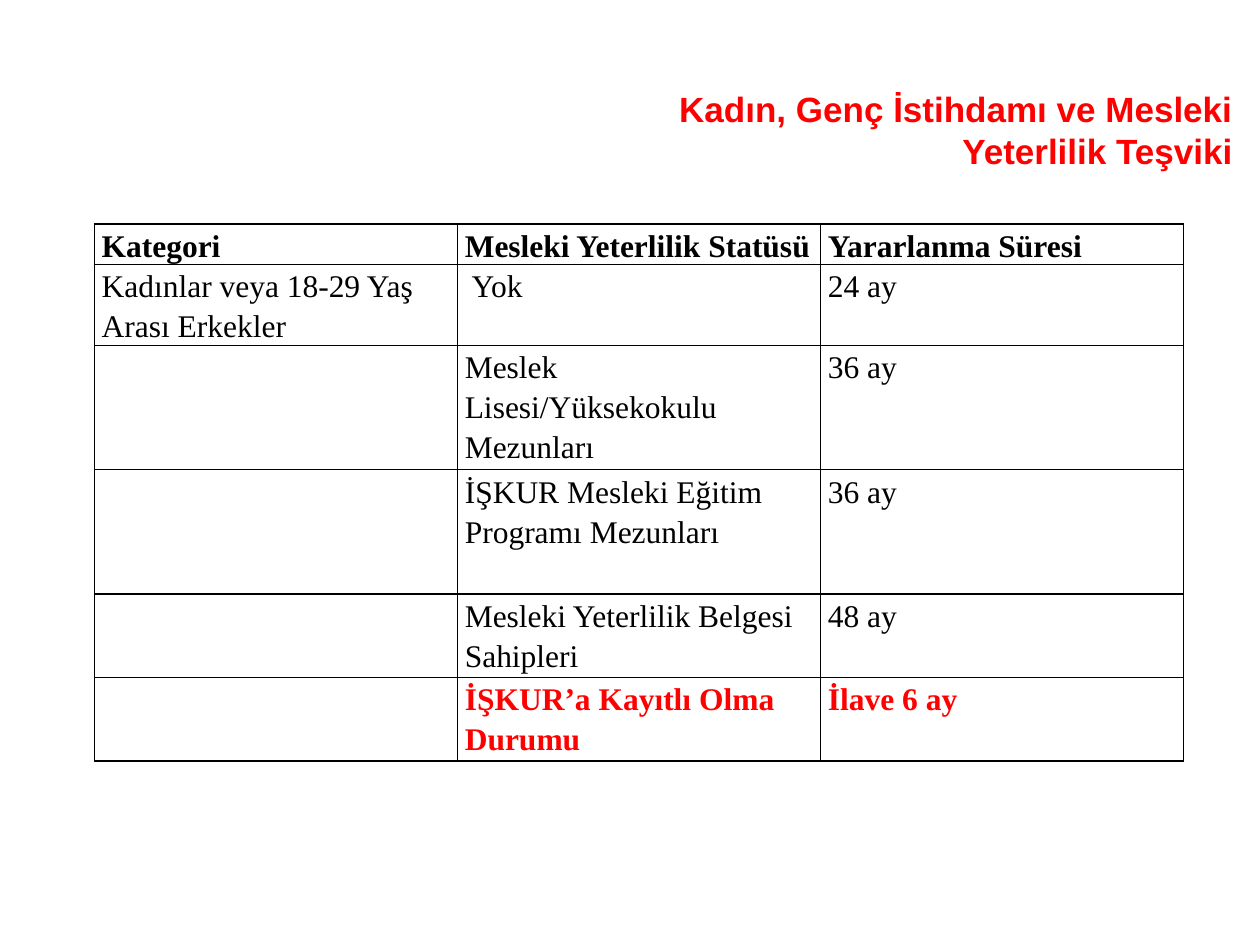
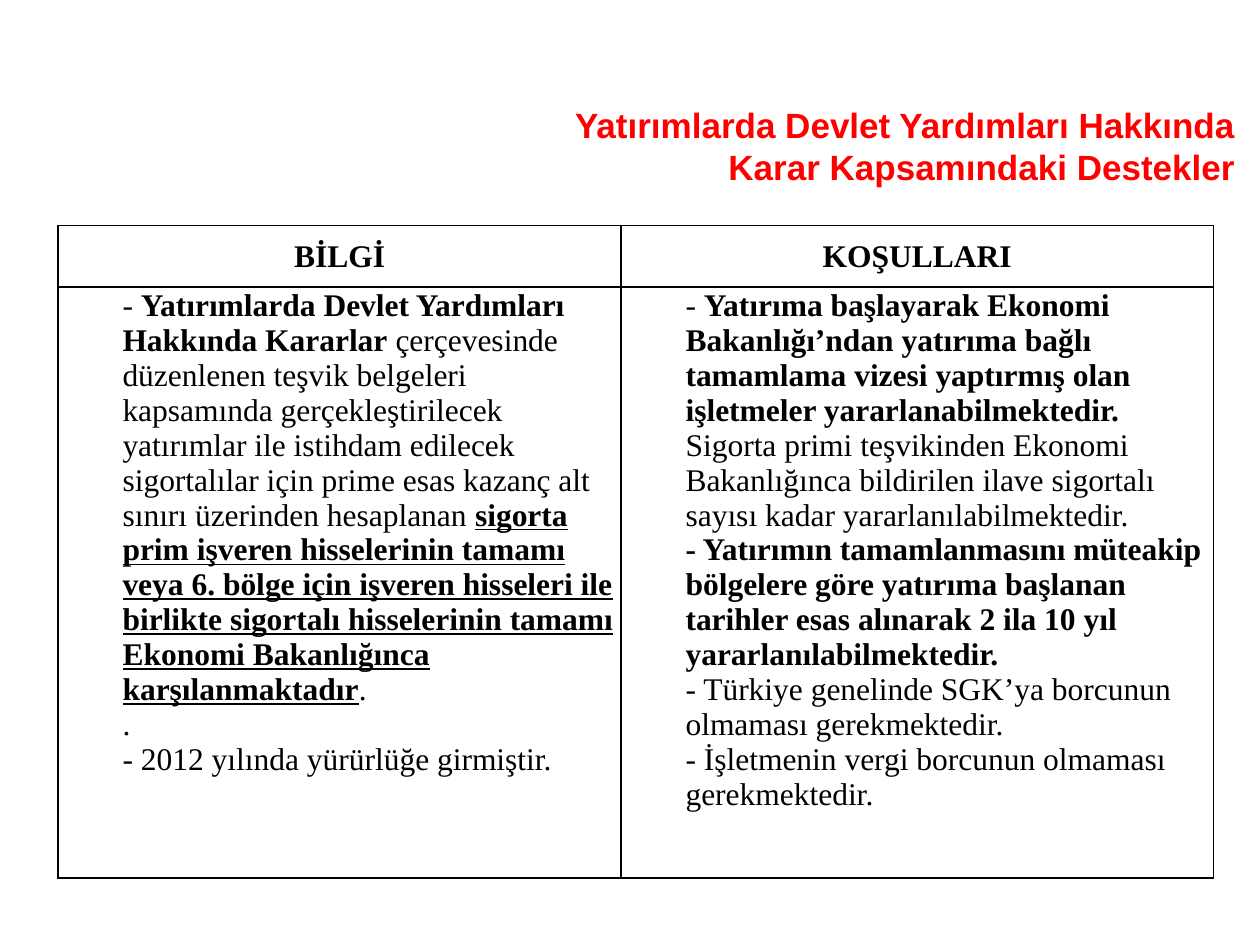
from dataclasses import dataclass

from lxml import etree
from pptx import Presentation
from pptx.dml.color import RGBColor
from pptx.enum.text import MSO_ANCHOR, PP_ALIGN
from pptx.oxml.ns import qn
from pptx.util import Cm, Pt

RIGHT, CENTER, LEFT = PP_ALIGN.RIGHT, PP_ALIGN.CENTER, PP_ALIGN.LEFT
TOP, MIDDLE = MSO_ANCHOR.TOP, MSO_ANCHOR.MIDDLE


@dataclass(frozen=True)
class Theme:
    ink: str = "000000"
    red: str = "FF0000"
    head_font: str = "Arial"
    body_font: str = "Times New Roman"
    head_size: int = 20
    body_size: int = 18
    rule: int = 1


THEME = Theme()

# Run styles: b = bold, u = underlined, r = red
TERMS = [
    ("Kategori", "Mesleki Yeterlilik Statüsü", "Yararlanma Süresi"),
    ("Kadınlar veya 18-29 Yaş Arası Erkekler", " Yok", "24 ay"),
    ("", "Meslek Lisesi/Yüksekokulu Mezunları", "36 ay"),
    ("", "İŞKUR Mesleki Eğitim Programı Mezunları", "36 ay"),
    ("", "Mesleki Yeterlilik Belgesi Sahipleri", "48 ay"),
    ("", "İŞKUR’a Kayıtlı Olma Durumu", "İlave 6 ay"),
]
TERM_STYLES = ["b", "", "", "", "", "br"]

INFO = [
    [
        ("- ", ""),
        ("Yatırımlarda Devlet Yardımları Hakkında Kararlar", "b"),
        (" çerçevesinde düzenlenen teşvik belgeleri kapsamında gerçekleştirilecek "
         "yatırımlar ile istihdam edilecek sigortalılar için prime esas kazanç alt "
         "sınırı üzerinden hesaplanan ", ""),
        ("sigorta prim işveren hisselerinin tamamı veya 6. bölge için işveren "
         "hisseleri ile birlikte sigortalı hisselerinin tamamı Ekonomi "
         "Bakanlığınca karşılanmaktadır", "bu"),
        (".\n.\n- 2012 yılında yürürlüğe girmiştir.", ""),
    ],
]
RULES = [
    [("- ", ""),
     ("Yatırıma başlayarak Ekonomi Bakanlığı’ndan yatırıma bağlı tamamlama "
      "vizesi yaptırmış olan işletmeler yararlanabilmektedir.", "b")],
    [("Sigorta primi teşvikinden Ekonomi Bakanlığınca bildirilen ilave sigortalı "
      "sayısı kadar yararlanılabilmektedir.", "")],
    [("- Yatırımın tamamlanmasını müteakip bölgelere göre yatırıma başlanan "
      "tarihler esas alınarak 2 ila 10 yıl yararlanılabilmektedir.", "b")],
    [("- Türkiye genelinde SGK’ya borcunun olmaması gerekmektedir.", "")],
    [("- İşletmenin vergi borcunun olmaması gerekmektedir.", "")],
]


def set_font(run, name, size, style=""):
    font = run.font
    font.name, font.size = name, Pt(size)
    font.bold, font.underline = "b" in style, "u" in style
    font.color.rgb = RGBColor.from_string(THEME.red if "r" in style else THEME.ink)


def add_title(slide, text, left, top, width, height):
    box = slide.shapes.add_textbox(Cm(left), Cm(top), Cm(width), Cm(height))
    frame = box.text_frame
    frame.word_wrap = True
    frame.vertical_anchor = MIDDLE
    frame.text = text
    para = frame.paragraphs[0]
    para.alignment = RIGHT
    set_font(para.runs[0], THEME.head_font, THEME.head_size, "br")


def add_runs(para, parts):
    for text, style in parts:
        for i, line in enumerate(text.split("\n")):
            if i:
                para.add_line_break()
            run = para.add_run()
            run.text = line
            set_font(run, THEME.body_font, THEME.body_size, style)


def add_grid(slide, left, top, widths, heights):
    frame = slide.shapes.add_table(len(heights), len(widths), Cm(left), Cm(top),
                                   Cm(sum(widths)), Cm(sum(heights)))
    grid = frame.table
    grid.first_row = grid.horz_banding = False
    for col, width in zip(grid.columns, widths):
        col.width = Cm(width)
    for row, height in zip(grid.rows, heights):
        row.height = Cm(height)
    for cell in grid.iter_cells():
        draw_edges(cell)
        cell.fill.background()
    return grid


def draw_edges(cell):
    props = cell._tc.get_or_add_tcPr()
    for side in ("lnL", "lnR", "lnT", "lnB"):
        line = etree.SubElement(props, qn(f"a:{side}"), w=str(Pt(THEME.rule)))
        fill = etree.SubElement(line, qn("a:solidFill"))
        etree.SubElement(fill, qn("a:srgbClr"), val=THEME.ink)


def fill_cell(cell, paras, side, top=0, anchor=TOP, align=LEFT, space=1.0, indent=0):
    cell.margin_left = cell.margin_right = Cm(side)
    cell.margin_top, cell.margin_bottom = Cm(top), 0
    cell.vertical_anchor = anchor
    frame = cell.text_frame
    for i, parts in enumerate(paras):
        para = frame.add_paragraph() if i else frame.paragraphs[0]
        para.alignment, para.line_spacing = align, space
        if indent:
            props = para._p.get_or_add_pPr()
            props.set("marL", str(Cm(indent)))
            props.set("indent", "0")
        add_runs(para, parts)


def add_terms(deck, blank):
    slide = deck.slides.add_slide(blank)
    grid = add_grid(slide, 1.9, 4.52, [7.32] * 3,
                    [0.81, 1.63, 2.51, 2.51, 1.68, 1.68])
    for r, (row, style) in enumerate(zip(TERMS, TERM_STYLES)):
        for c, text in enumerate(row):
            paras = [[(text, style)]] if text else []
            fill_cell(grid.cell(r, c), paras, 0.15, space=1.15)
    add_title(slide, "Kadın, Genç İstihdamı ve Mesleki Yeterlilik Teşviki",
              13.03, 1.83, 12.07, 1.57)


def add_aid(deck, blank):
    slide = deck.slides.add_slide(blank)
    add_title(slide, "Yatırımlarda Devlet Yardımları Hakkında Karar "
              "Kapsamındaki Destekler", 9.45, 1.88, 15.7, 2.11)
    grid = add_grid(slide, 1.17, 4.55, [11.35, 11.94], [1.24, 11.91])
    for c, (head, body) in enumerate([("BİLGİ", INFO), ("KOŞULLARI", RULES)]):
        fill_cell(grid.cell(0, c), [[(head, "b")]], 0.03, 0.03, MIDDLE, CENTER)
        fill_cell(grid.cell(1, c), body, 0.03, 0.03, indent=1.27)


def main():
    deck = Presentation()
    deck.slide_width, deck.slide_height = Cm(25.4), Cm(19.05)
    blank = deck.slide_layouts[6]
    add_terms(deck, blank)
    add_aid(deck, blank)
    deck.save("out.pptx")


if __name__ == "__main__":
    main()
